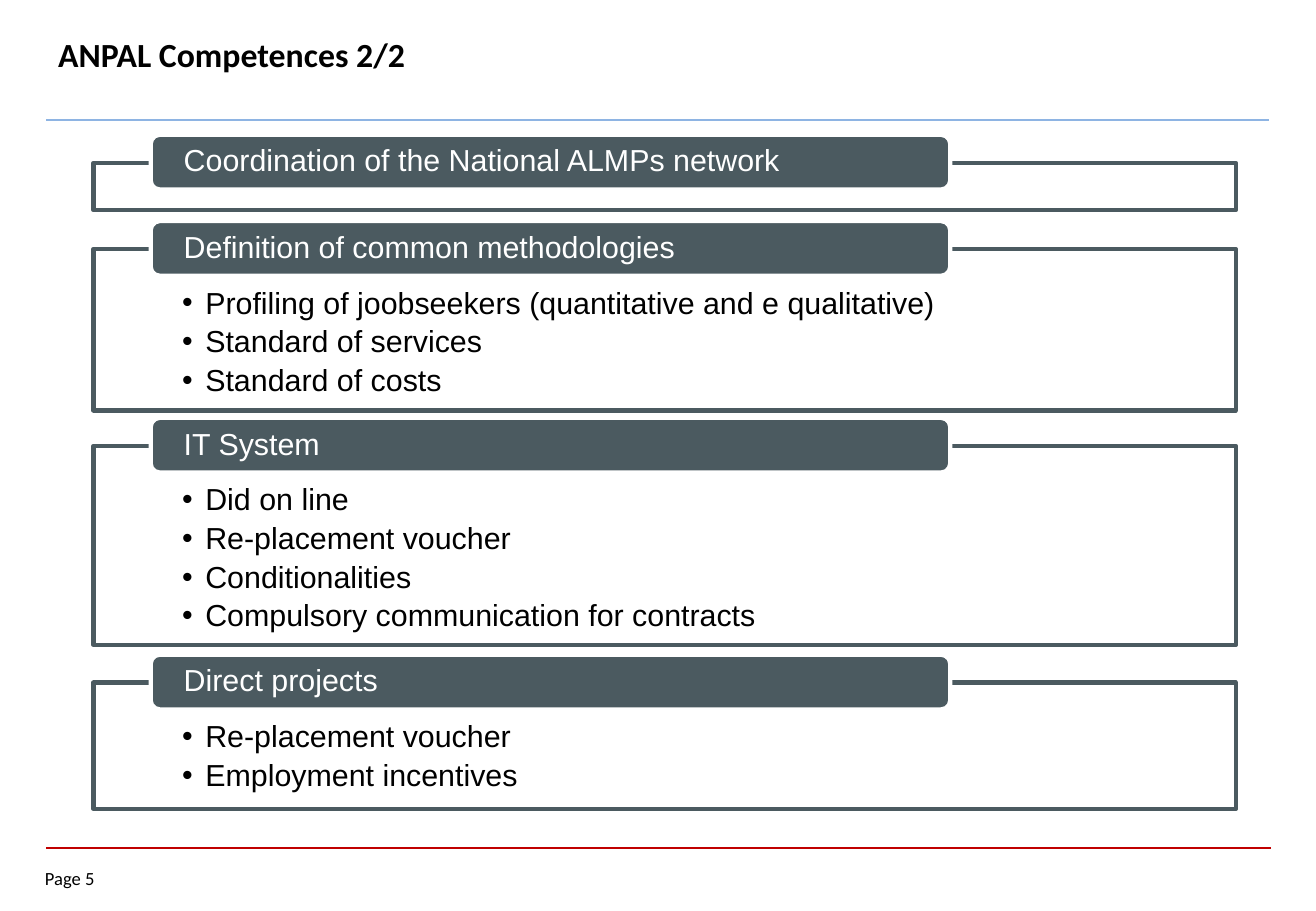
from lxml.etree import SubElement
from pptx import Presentation
from pptx.dml.color import RGBColor
from pptx.enum.shapes import MSO_CONNECTOR, MSO_SHAPE
from pptx.enum.text import MSO_ANCHOR, PP_ALIGN
from pptx.oxml.ns import qn
from pptx.util import Inches, Pt

BLACK = RGBColor(0x00, 0x00, 0x00)
WHITE = RGBColor(0xFF, 0xFF, 0xFF)
SLATE = RGBColor(0x4B, 0x5A, 0x60)
BLUE = RGBColor(0x8E, 0xB4, 0xE3)
RED = RGBColor(0xC0, 0x00, 0x00)

SECTIONS = [
    (1.34, 0.39, "Coordination of the National ALMPs network", []),
    (2.05, 1.33, "Definition of common methodologies", [
        "Profiling of joobseekers (quantitative and e qualitative)",
        "Standard of services",
        "Standard of costs"]),
    (3.67, 1.64, "IT System", [
        "Did on line",
        "Re-placement voucher",
        "Conditionalities",
        "Compulsory communication for contracts"]),
    (5.62, 1.04, "Direct projects", [
        "Re-placement voucher",
        "Employment incentives"]),
]


def write(tf, lines, size=18, font="Arial", color=BLACK, bold=False, bullet=False,
          anchor=MSO_ANCHOR.TOP, insets=(0, 0, 0, 0), spacing=1.0, after=0):
    tf.word_wrap = True
    tf.vertical_anchor = anchor
    tf.margin_left, tf.margin_top, tf.margin_right, tf.margin_bottom = map(Inches, insets)
    for i, line in enumerate(lines):
        p = tf.add_paragraph() if i else tf.paragraphs[0]
        if bullet:
            pPr = p._p.get_or_add_pPr()
            pPr.set("marL", str(Inches(0.19)))
            pPr.set("indent", str(Inches(-0.19)))
            SubElement(pPr, qn("a:buFont"), typeface="Arial")
            SubElement(pPr, qn("a:buChar"), char="•")
        p.alignment = PP_ALIGN.LEFT
        p.line_spacing = spacing
        p.space_after = Pt(after)
        r = p.add_run()
        r.text = line
        r.font.size = Pt(size)
        r.font.name = font
        r.font.bold = bold
        r.font.color.rgb = color


class SlideBuilder:
    """Draws the slide's elements in one shared style."""

    def __init__(self, prs):
        self.s = prs.slides.add_slide(prs.slide_layouts[6])
        self.line_width = Pt(2.5)

    def rule(self, y, right, color, width):
        ln = self.s.shapes.add_connector(
            MSO_CONNECTOR.STRAIGHT, Inches(0.38), Inches(y), Inches(right), Inches(y))
        ln.line.color.rgb = color
        ln.line.width = Pt(width)
        SubElement(ln._element.spPr, qn("a:effectLst"))

    def text(self, x, y, w, h, line, **fmt):
        sp = self.s.shapes.add_textbox(Inches(x), Inches(y), Inches(w), Inches(h))
        write(sp.text_frame, [line], font="Calibri", **fmt)

    def box(self, kind, x, y, w, h, fill, line):
        sp = self.s.shapes.add_shape(kind, Inches(x), Inches(y), Inches(w), Inches(h))
        sp.shadow.inherit = False
        sp.fill.solid()
        sp.fill.fore_color.rgb = fill
        sp.line.color.rgb = line
        sp.line.width = self.line_width
        return sp.text_frame

    def section(self, y, h, heading, items):
        tf = self.box(MSO_SHAPE.RECTANGLE, 0.77, y, 9.4, h, WHITE, SLATE)
        if items:
            write(tf, items, bullet=True, insets=(0.73, 0.32, 0.73, 0.14),
                  spacing=0.9, after=3.5)
        tf = self.box(MSO_SHAPE.ROUNDED_RECTANGLE, 1.24, y - 0.23, 6.58, 0.45, SLATE, WHITE)
        write(tf, [heading], color=WHITE, anchor=MSO_ANCHOR.MIDDLE,
              insets=(0.25, 0, 0.25, 0), spacing=0.9)


def main():
    prs = Presentation()
    prs.slide_width = Inches(10.83)
    prs.slide_height = Inches(7.5)
    slide = SlideBuilder(prs)
    slide.rule(6.98, 10.46, RED, 1)
    slide.rule(0.99, 10.44, BLUE, 1.5)
    slide.text(0.37, 7.14, 0.73, 0.22, "Page 5", size=11)
    slide.text(0.38, 0.09, 9.92, 0.71, "ANPAL Competences 2/2", size=20, bold=True,
               anchor=MSO_ANCHOR.MIDDLE, insets=(0.1, 0.05, 0.1, 0.05))
    for section in SECTIONS:
        slide.section(*section)
    prs.save("out.pptx")


if __name__ == "__main__":
    main()
